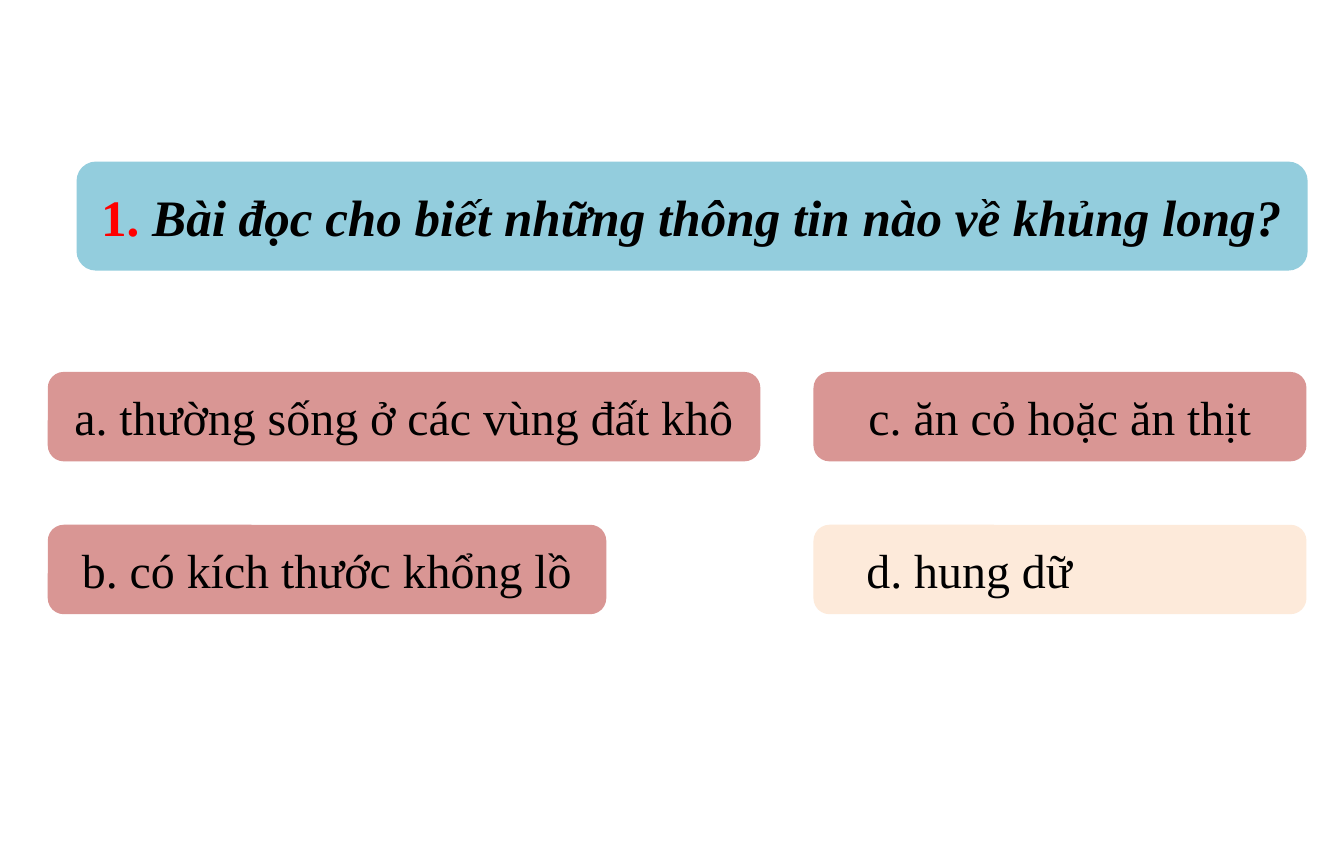
from dataclasses import dataclass

from pptx import Presentation
from pptx.dml.color import RGBColor
from pptx.enum.shapes import MSO_SHAPE
from pptx.enum.text import MSO_ANCHOR, PP_ALIGN
from pptx.util import Pt

ROUND = MSO_SHAPE.ROUNDED_RECTANGLE
MIDDLE = MSO_ANCHOR.MIDDLE
LEFT, CENTER = PP_ALIGN.LEFT, PP_ALIGN.CENTER
PX = 9144  # 100 px to the inch


@dataclass(frozen=True)
class Theme:
    font: str = "Times New Roman"
    title: int = 32
    body: int = 30
    edge: int = 2
    ink: str = "000000"
    accent: str = "FF0000"
    blue: str = "93CDDD"
    rose: str = "D99694"
    cream: str = "FDEADA"


theme = Theme()
deck = Presentation()
deck.slide_width, deck.slide_height = 1169 * PX, 750 * PX
slide = deck.slides.add_slide(deck.slide_layouts[6])


def add_card(left, top, width, height, fill, size, align=CENTER):
    """Add a rounded card and return it with its styled first paragraph."""
    card = slide.shapes.add_shape(
        ROUND, left * PX, top * PX, width * PX, height * PX)
    card.shadow.inherit = False
    card.fill.solid()
    card.fill.fore_color.rgb = RGBColor.from_string(fill)
    card.line.color.rgb = RGBColor.from_string(fill)
    card.line.width = Pt(theme.edge)
    card.text_frame.word_wrap = True
    card.text_frame.vertical_anchor = MIDDLE
    para = card.text_frame.paragraphs[0]
    para.alignment = align
    para.font.name = theme.font
    para.font.size = Pt(size)
    para.font.color.rgb = RGBColor.from_string(theme.ink)
    return card, para


# Question
_, para = add_card(68, 142, 1068, 92, theme.blue, theme.title)
para.font.bold = True
number = para.add_run()
number.text = "1. "
number.font.color.rgb = RGBColor.from_string(theme.accent)
question = para.add_run()
question.text = "Bài đọc cho biết những thông tin nào về khủng long?"
question.font.italic = True

# Answers
COLS = (43, 709)
ROWS = (325, 458)
HIGH = 75
INDENT = 41
answers = [
    (0, 0, 617, theme.rose, CENTER, "a. thường sống ở các vùng đất khô"),
    (0, 1, 483, theme.rose, CENTER, "b. có kích thước khổng lồ"),
    (1, 0, 426, theme.rose, CENTER, "c. ăn cỏ hoặc ăn thịt"),
    (1, 1, 426, theme.cream, LEFT, "d. hung dữ"),
]
for col, row, width, fill, align, text in answers:
    card, para = add_card(
        COLS[col], ROWS[row], width, HIGH, fill, theme.body, align)
    para.add_run().text = text
    if align == LEFT:
        card.text_frame.margin_left = INDENT * PX

deck.save("out.pptx")
